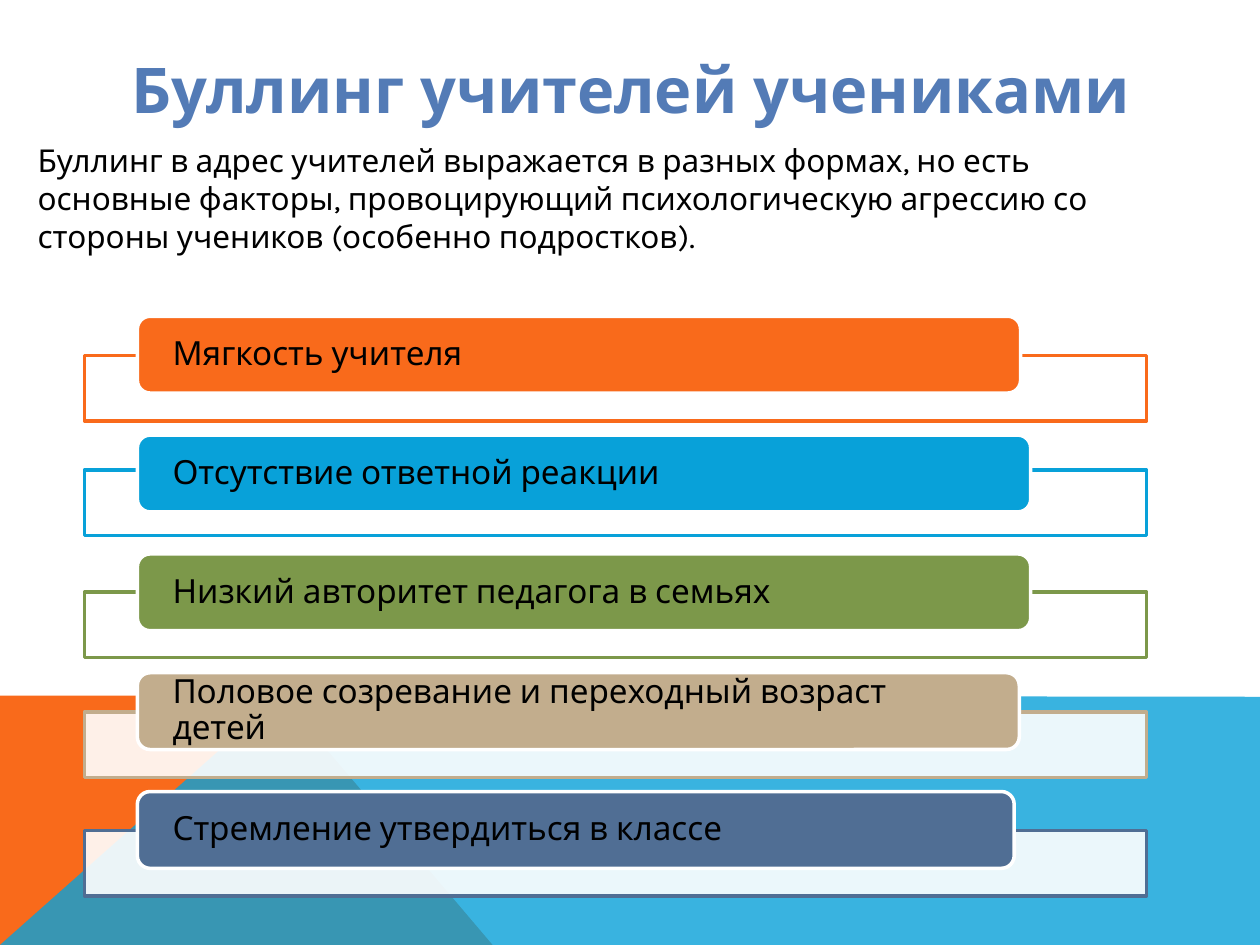
import pptx
import pptx.util
import pptx.dml.color
import pptx.enum.shapes
import pptx.enum.text
import pptx.oxml

presentation = pptx.Presentation()
presentation.slide_width = pptx.util.Inches(10)
presentation.slide_height = pptx.util.Inches(7.5)
slide = presentation.slides.add_slide(presentation.slide_layouts[6])
column = presentation.slide_width / 100
row = presentation.slide_height / 75
kinds = pptx.enum.shapes.MSO_SHAPE
anchors = pptx.enum.text.MSO_ANCHOR
alignments = pptx.enum.text.PP_ALIGN


def paint(shape, fill, opacity=100, line=None):
    shape.shadow.inherit = False
    shape.fill.solid()
    shape.fill.fore_color.rgb = pptx.dml.color.RGBColor.from_string(fill)
    if opacity < 100:
        color = shape.fill._xPr.solidFill.srgbClr
        color.append(pptx.oxml.parse_xml(
            '<a:alpha xmlns:a="http://schemas.openxmlformats.org/drawingml/2006/main" '
            f'val="{opacity * 1000}"/>'))
    if line:
        shape.line.color.rgb = pptx.dml.color.RGBColor.from_string(line)
        shape.line.width = pptx.util.Pt(2)
    else:
        shape.line.fill.background()


def write(shape, text, color, font_format, frame_format, paragraph_format):
    frame = shape.text_frame
    paragraph = frame.paragraphs[0]
    run = paragraph.add_run()
    run.text = text
    run.font.color.rgb = pptx.dml.color.RGBColor.from_string(color)
    for target, values in ((run.font, font_format), (frame, frame_format),
                           (paragraph, paragraph_format)):
        for name, value in values.items():
            setattr(target, name, value)


bands = [
    ("F96A1B", 100, [(0, 75), (0, 55.2), (22.3, 55.2), (39.1, 75)]),
    ("08A1D9", 80, [(0, 75), (22.3, 55.2), (100, 55.3), (100, 75)]),
]
for fill, opacity, points in bands:
    corners = [(round(x * column), round(y * row)) for x, y in points]
    builder = slide.shapes.build_freeform(*corners[0], scale=1.0)
    builder.add_line_segments(corners[1:], close=True)
    paint(builder.convert_to_shape(), fill, opacity)

texts = [
    ("Буллинг учителей учениками", (9, 4, 82.2, 6), "537BB6", 36, True,
     anchors.MIDDLE, alignments.CENTER),
    ("Буллинг в адрес учителей выражается в разных формах, но есть основные факторы, "
     "провоцирующий психологическую агрессию со стороны учеников (особенно подростков).",
     (2, 10.7, 91.3, 10.1), "000000", 18, False, anchors.TOP, alignments.LEFT),
]
for text, (left, top, width, height), color, size, bold, anchor, alignment in texts:
    box = slide.shapes.add_textbox(
        round(left * column), round(top * row), round(width * column), round(height * row))
    write(box, text, color,
          {"name": "Karla", "size": pptx.util.Pt(size), "bold": bold},
          {"word_wrap": True, "vertical_anchor": anchor},
          {"alignment": alignment})

factors = [
    ("Мягкость учителя", "F96A1B", 28.2, 70.1),
    ("Отсутствие ответной реакции", "08A1D9", 37.3, 70.9),
    ("Низкий авторитет педагога в семьях", "7C984A", 47, 70.9),
    ("Половое созревание и переходный возраст детей", "C2AD8D", 56.5, 70),
    ("Стремление утвердиться в классе", "506E94", 65.9, 69.6),
]
label_format = {
    "word_wrap": True, "vertical_anchor": anchors.MIDDLE,
    "margin_left": round(2.5 * column), "margin_right": round(2.5 * column),
    "margin_top": 0, "margin_bottom": 0,
}
for index, (text, color, frame_top, label_width) in enumerate(factors):
    frame = slide.shapes.add_shape(
        kinds.RECTANGLE, round(6.7 * column), round(frame_top * row),
        round(84.3 * column), round(5.2 * row))
    paint(frame, "FFFFFF", 90, color)
    label = slide.shapes.add_shape(
        kinds.ROUNDED_RECTANGLE, round(10.9 * column), round((25.1 + 9.43 * index) * row),
        round(label_width * column), round(6.1 * row))
    paint(label, color, line="FFFFFF")
    write(label, text, "000000", {"name": "Karla", "size": pptx.util.Pt(19)},
          label_format, {"alignment": alignments.LEFT, "line_spacing": 0.9})

presentation.save("out.pptx")
